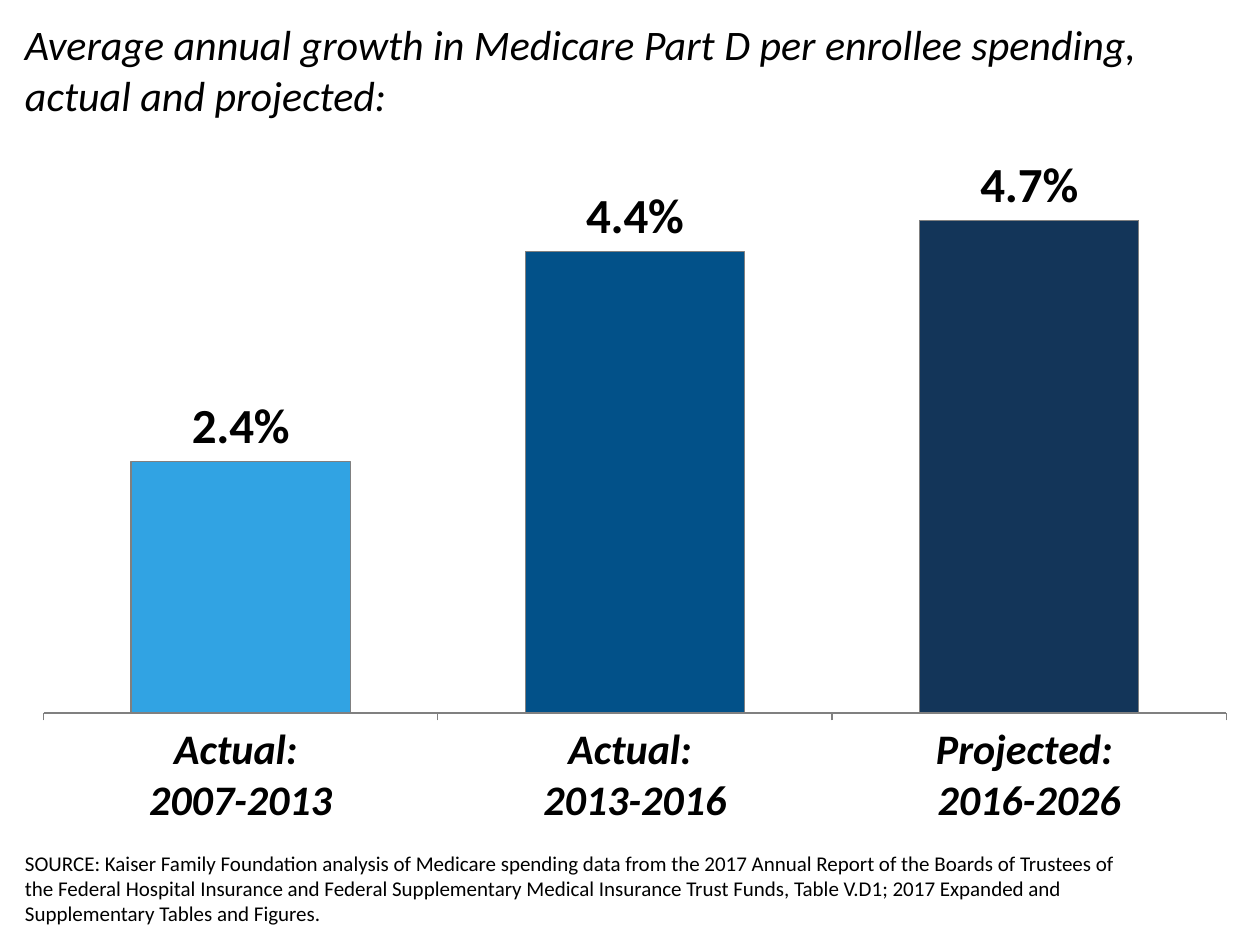
from lxml import etree
from pptx import Presentation
from pptx.chart.data import CategoryChartData
from pptx.dml.color import RGBColor
from pptx.enum.chart import XL_CHART_TYPE, XL_LABEL_POSITION, XL_TICK_MARK
from pptx.enum.text import MSO_ANCHOR
from pptx.util import Inches, Pt

COLUMNS = XL_CHART_TYPE.COLUMN_CLUSTERED
OUTSIDE_END = XL_LABEL_POSITION.OUTSIDE_END
TICK_OUTSIDE = XL_TICK_MARK.OUTSIDE
TOP, BOTTOM = MSO_ANCHOR.TOP, MSO_ANCHOR.BOTTOM
CHART_NS = "http://schemas.openxmlformats.org/drawingml/2006/chart"

COLORS = {
    "text": "000000",
    "outline": "808080",
    "early": "31A3E3",
    "recent": "025189",
    "projected": "133559",
}
GROWTH = [
    ("Actual: \n2007-2013", 0.024, "early"),
    ("Actual: \n2013-2016", 0.044, "recent"),
    ("Projected: \n2016-2026", 0.047, "projected"),
]
TITLE = "Average annual growth in Medicare Part D per enrollee spending, actual and projected:"
SOURCE = (
    "SOURCE: Kaiser Family Foundation analysis of Medicare spending data from the "
    "2017 Annual Report of the Boards of Trustees of the Federal Hospital Insurance "
    "and Federal Supplementary Medical Insurance Trust Funds, Table V.D1; 2017 "
    "Expanded and Supplementary Tables and Figures."
)


class SlideBuilder:
    font_name = "Calibri"
    percent = "0.0%"
    columns, rows = 100, 75

    def __init__(self, deck):
        self.width, self.height = deck.slide_width, deck.slide_height
        self.page = deck.slides.add_slide(deck.slide_layouts[6])

    def area(self, column, row, across, down):
        return (
            round(self.width * column / self.columns),
            round(self.height * row / self.rows),
            round(self.width * across / self.columns),
            round(self.height * down / self.rows),
        )

    def color(self, name):
        return RGBColor.from_string(COLORS[name])

    def style_font(self, font, size, bold=False, italic=False):
        font.name = self.font_name
        font.size = Pt(size)
        font.bold = bold
        font.italic = italic
        font.color.rgb = self.color("text")

    def outline(self, line):
        line.color.rgb = self.color("outline")
        line.width = Pt(0.75)

    def text(self, words, area, size, anchor, italic=False):
        box = self.page.shapes.add_textbox(*self.area(*area))
        frame = box.text_frame
        frame.word_wrap = True
        frame.vertical_anchor = anchor
        para = frame.paragraphs[0]
        para.text = words
        self.style_font(para.font, size, italic=italic)

    def column_chart(self, rows, area, plot_area):
        data = CategoryChartData(number_format=self.percent)
        data.categories = [label for label, _, _ in rows]
        data.add_series("Series 1", [value for _, value, _ in rows])
        chart = self.page.shapes.add_chart(COLUMNS, *self.area(*area), data).chart
        chart.has_title = False
        chart.has_legend = False
        self.style_font(chart.font, 10)

        value_axis = chart.value_axis
        value_axis.minimum_scale, value_axis.maximum_scale = 0, 0.05
        value_axis.has_major_gridlines = False
        value_axis.visible = False

        category_axis = chart.category_axis
        category_axis.major_tick_mark = TICK_OUTSIDE
        self.outline(category_axis.format.line)
        self.style_font(category_axis.tick_labels.font, 24, bold=True, italic=True)

        plot = chart.plots[0]
        plot.gap_width = 80
        plot.vary_by_categories = False
        series = plot.series[0]
        for index, (_, _, color_name) in enumerate(rows):
            bar = series.points[index].format
            bar.fill.solid()
            bar.fill.fore_color.rgb = self.color(color_name)
            self.outline(bar.line)

        labels = series.data_labels
        labels.show_value = True
        labels.position = OUTSIDE_END
        labels.number_format = self.percent
        labels.number_format_is_linked = False
        self.style_font(labels.font, 28, bold=True)
        self.place_plot(chart, plot_area)

    def place_plot(self, chart, plot_area):
        plot_element = chart.plots[0]._element.getparent()
        for old_layout in plot_element.findall(f"{{{CHART_NS}}}layout"):
            plot_element.remove(old_layout)
        layout = etree.Element(f"{{{CHART_NS}}}layout")
        manual = etree.SubElement(layout, f"{{{CHART_NS}}}manualLayout")
        settings = [("layoutTarget", "inner"), ("xMode", "edge"), ("yMode", "edge")]
        settings += zip("xywh", plot_area)
        for tag, value in settings:
            etree.SubElement(manual, f"{{{CHART_NS}}}{tag}", val=str(value))
        plot_element.insert(0, layout)


def main():
    deck = Presentation()
    deck.slide_width, deck.slide_height = Inches(10), Inches(7.5)
    slide = SlideBuilder(deck)
    slide.column_chart(GROWTH, (2.5, 11, 95.8, 57), (0.01, 0.07, 0.98, 0.73))
    slide.text(SOURCE, (1, 68, 91, 6), 12, BOTTOM)
    slide.text(TITLE, (1, 1, 98, 10), 24, TOP, italic=True)
    deck.save("out.pptx")


if __name__ == "__main__":
    main()
